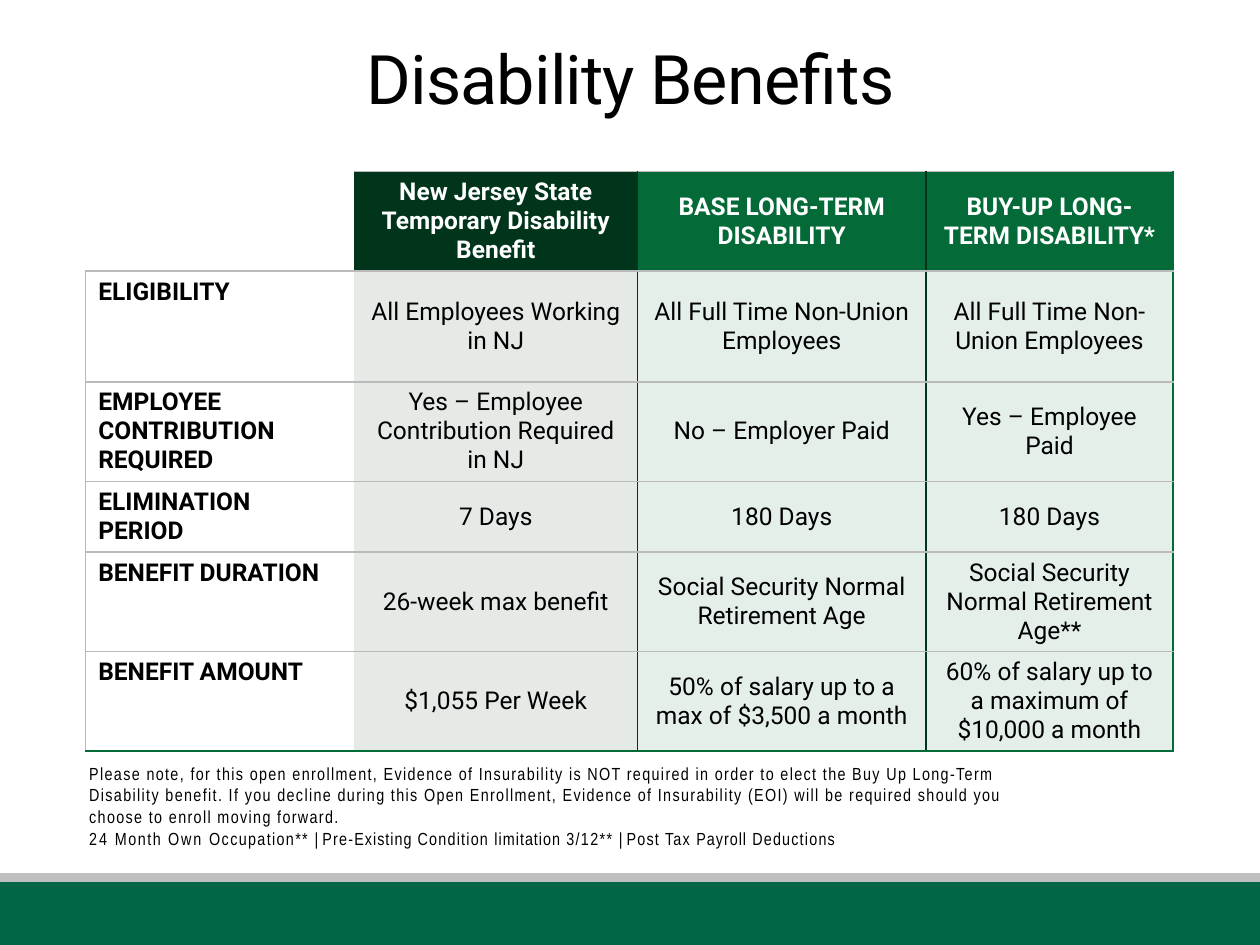
from lxml.etree import SubElement
from pptx import Presentation
from pptx.dml.color import RGBColor
from pptx.enum.shapes import MSO_SHAPE
from pptx.enum.text import MSO_ANCHOR, MSO_AUTO_SIZE, PP_ALIGN
from pptx.oxml.ns import qn
from pptx.util import Inches, Pt

BLACK = RGBColor(0x00, 0x00, 0x00)
WHITE = RGBColor(0xFF, 0xFF, 0xFF)
GRAY = RGBColor(0xBA, 0xBA, 0xBA)
SILVER = RGBColor(0xBF, 0xBF, 0xBF)
DARK = RGBColor(0x01, 0x35, 0x1B)
GREEN = RGBColor(0x04, 0x6A, 0x38)
BAND = RGBColor(0x00, 0x66, 0x47)


def style(run, face, size, color, bold=False, gap=0):
    run.font.name = face
    run.font.size = Pt(size)
    run.font.bold = bold
    run.font.color.rgb = color
    if gap:
        run.font._element.set("spc", str(round(gap * 100)))


def edge(cell, side, color):
    line = SubElement(cell._tc.get_or_add_tcPr(), qn(f"a:ln{side}"), w=str(Pt(1)))
    if color is None:
        SubElement(line, qn("a:noFill"))
    else:
        fill = SubElement(line, qn("a:solidFill"))
        SubElement(fill, qn("a:srgbClr"), val=str(color))


prs = Presentation()
prs.slide_width = Inches(10)
prs.slide_height = Inches(7.5)
slide = prs.slides.add_slide(prs.slide_layouts[5])
shapes = slide.shapes

for top, height, color in [(7, 0.5, BAND), (6.93, 0.07, SILVER)]:
    bar = shapes.add_shape(MSO_SHAPE.RECTANGLE, 0, Inches(top), Inches(10), Inches(height))
    bar.shadow.inherit = False
    bar.fill.solid()
    bar.fill.fore_color.rgb = color
    if color == BAND:
        bar.line.color.rgb = BAND
        bar.line.width = Pt(0.75)
    else:
        bar.line.fill.background()

title = shapes.title
title.left, title.top = Inches(0.88), Inches(0.34)
title.width, title.height = Inches(8.25), Inches(0.65)
frame = title.text_frame
frame.text = "Disability Benefits"
frame.auto_size = MSO_AUTO_SIZE.NONE
frame.vertical_anchor = MSO_ANCHOR.BOTTOM
para = frame.paragraphs[0]
para.alignment = PP_ALIGN.CENTER
para.line_spacing = 0.85
style(para.runs[0], "Roboto", 39, BLACK, gap=-0.5)

rows = [
    ["", "New Jersey State Temporary Disability Benefit",
     "BASE LONG-TERM DISABILITY", "BUY-UP LONG-TERM DISABILITY*"],
    ["ELIGIBILITY", "All Employees Working in NJ",
     "All Full Time Non-Union Employees", "All Full Time Non-Union Employees"],
    ["EMPLOYEE CONTRIBUTION REQUIRED", "Yes – Employee Contribution Required in NJ",
     "No – Employer Paid", "Yes – Employee Paid"],
    ["ELIMINATION PERIOD", "7 Days", "180 Days", "180 Days"],
    ["BENEFIT DURATION", "26-week max benefit",
     "Social Security Normal Retirement Age", "Social Security Normal Retirement Age**"],
    ["BENEFIT AMOUNT", "$1,055 Per Week",
     "50% of salary up to a max of $3,500 a month",
     "60% of salary up to a maximum of $10,000 a month"],
]
widths = [2.13, 2.25, 2.29, 1.96]
heights = [0.65, 0.88, 0.76, 0.55, 0.5, 0.73]
fills = [None, DARK, GREEN, GREEN]
lefts = [GRAY, None, DARK, DARK]
rights = [None, DARK, DARK, GREEN]

table = shapes.add_table(len(rows), len(widths), Inches(0.68), Inches(1.36),
                         Inches(sum(widths)), Inches(sum(heights))).table
table.horz_banding = False
table._tbl.tblPr.find(qn("a:tableStyleId")).text = "{2D5ABB26-0587-4C30-8999-92F81FD0307C}"
for col, width in zip(table.columns, widths):
    col.width = Inches(width)
for row, height in zip(table.rows, heights):
    row.height = Inches(height)

for r, texts in enumerate(rows):
    for c, text in enumerate(texts):
        cell = table.cell(r, c)
        head, label = r == 0, c == 0
        blank = head and label
        edge(cell, "L", None if blank else lefts[c])
        edge(cell, "R", rights[c])
        edge(cell, "T", None if blank else GRAY)
        edge(cell, "B", GREEN if r == len(rows) - 1 else GRAY)
        if label:
            cell.fill.background()
        else:
            cell.fill.solid()
            cell.fill.fore_color.rgb = fills[c]
            cell.vertical_anchor = MSO_ANCHOR.MIDDLE
            if not head:
                tint = cell._tc.tcPr.find(qn("a:solidFill")).find(qn("a:srgbClr"))
                SubElement(tint, qn("a:alpha"), val="10000")
        if text:
            para = cell.text_frame.paragraphs[0]
            para.text = text
            para.alignment = PP_ALIGN.LEFT if label else PP_ALIGN.CENTER
            style(para.runs[0], "Roboto", 14, WHITE if head else BLACK, head or label)

notes = [
    [("Please note, for this open enrollment, Evidence of Insurability is NOT required "
      "in order to elect the Buy Up Long-Term Disability benefit. If you decline during "
      "this Open Enrollment, Evidence of Insurability (EOI) will be required should you "
      "choose to enroll moving forward.", 0.8)],
    [("24 ", 1.1), ("Month ", 0.9), ("Own ", 1.1), ("Occupation** ", 0.8), ("| ", 0),
     ("Pre-", 0.7), ("Existing ", 0.6), ("Condition ", 0.7), ("limitation ", 0.6),
     ("3/12** ", 0.8), ("| ", 0), ("Post Tax ", 0.7), ("Payroll ", 0.6),
     ("Deductions", 0.7)],
]
box = shapes.add_textbox(Inches(0.61), Inches(6.01), Inches(7.57), Inches(0.79))
frame = box.text_frame
frame.word_wrap = True
frame.auto_size = MSO_AUTO_SIZE.SHAPE_TO_FIT_TEXT
for i, parts in enumerate(notes):
    para = frame.add_paragraph() if i else frame.paragraphs[0]
    para.space_before = Pt(i)
    for text, gap in parts:
        run = para.add_run()
        run.text = text
        style(run, "Arial Narrow", 10, BLACK, gap=gap)

prs.save("out.pptx")
